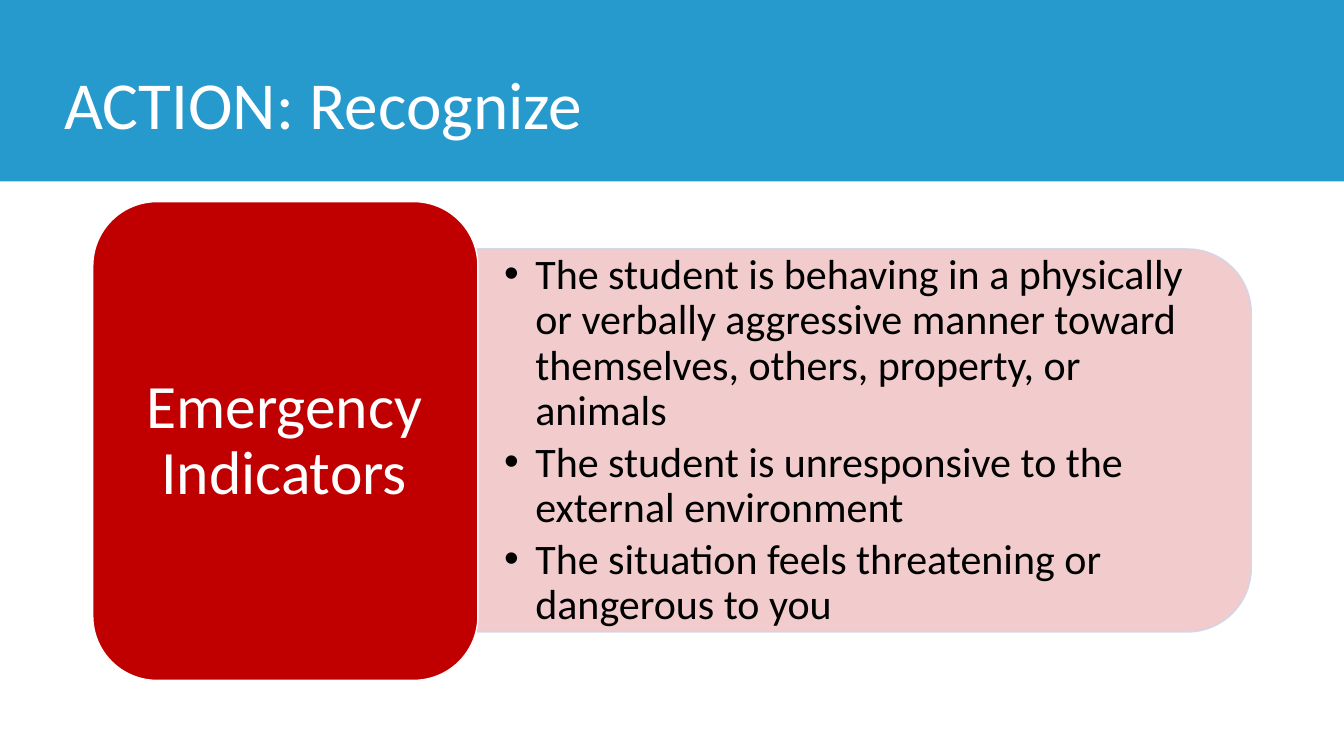
from lxml.etree import SubElement
from pptx import Presentation
from pptx.dml.color import RGBColor
from pptx.enum.shapes import MSO_SHAPE
from pptx.enum.text import MSO_ANCHOR, PP_ALIGN
from pptx.oxml.ns import qn
from pptx.util import Inches, Pt


def color(code):
    return RGBColor.from_string(code)


def fade(fill, percent):
    fill_tag = fill._xPr.find(qn("a:solidFill"))
    SubElement(fill_tag[0], qn("a:alpha"), val=str(percent * 1000))


class Deck:
    font = "Calibri"

    def __init__(self, width, height):
        self.show = Presentation()
        self.show.slide_width = Inches(width)
        self.show.slide_height = Inches(height)
        self.slide = self.show.slides.add_slide(self.show.slide_layouts[6])

    def shape(self, kind, box, fill, line=None, alpha=100, edge=100, turn=0):
        item = self.slide.shapes.add_shape(kind, *map(Inches, box))
        item.shadow.inherit = False
        item.rotation = turn
        item.fill.solid()
        item.fill.fore_color.rgb = color(fill)
        if alpha < 100:
            fade(item.fill, alpha)
        if line:
            item.line.color.rgb = color(line)
            item.line.width = Pt(1)
            if edge < 100:
                fade(item.line.fill, edge)
        else:
            item.line.fill.background()

    def text(self, box, lines, size, ink, inset=(0.1, 0.05), align=PP_ALIGN.LEFT,
             bullet=False, after=0):
        frame = self.slide.shapes.add_textbox(*map(Inches, box)).text_frame
        side, edge = map(Inches, inset)
        form = {"word_wrap": True, "vertical_anchor": MSO_ANCHOR.MIDDLE,
                "margin_left": side, "margin_right": side,
                "margin_top": edge, "margin_bottom": edge}
        for name, value in form.items():
            setattr(frame, name, value)
        frame.text = "\n".join(lines)
        for para in frame.paragraphs:
            form = {"alignment": align, "line_spacing": 0.9, "space_after": Pt(after)}
            for name, value in form.items():
                setattr(para, name, value)
            if bullet:
                self.bullet(para)
            form = {"name": self.font, "size": Pt(size)}
            for run in para.runs:
                for name, value in form.items():
                    setattr(run.font, name, value)
                run.font.color.rgb = color(ink)

    def bullet(self, para):
        props = para._p.get_or_add_pPr()
        props.set("marL", str(Inches(0.31)))
        props.set("indent", str(-Inches(0.31)))
        SubElement(props, qn("a:buFont"), typeface="Arial")
        SubElement(props, qn("a:buChar"), char="•")


def main():
    deck = Deck(13.33, 7.5)
    deck.shape(MSO_SHAPE.RECTANGLE, (0, 0, 13.33, 1.8), "279ACD")
    deck.shape(MSO_SHAPE.ROUND_2_SAME_RECTANGLE, (6.67, 0.53, 3.8, 7.68), "C00000",
               line="CFD5EA", alpha=20, edge=90, turn=90)
    deck.text((4.73, 2.66, 7.5, 3.43), [
        "The student is behaving in a physically or verbally aggressive manner "
        "toward themselves, others, property, or animals",
        "The student is unresponsive to the external environment",
        "The situation feels threatening or dangerous to you",
    ], 30, "000000", inset=(0.27, 0.14), bullet=True, after=4.5)
    deck.shape(MSO_SHAPE.ROUNDED_RECTANGLE, (0.92, 2, 3.82, 4.75), "C00000", line="FFFFFF")
    deck.text((1.1, 2.19, 3.44, 4.38), ["Emergency", "Indicators"], 44, "FFFFFF",
              inset=(0.18, 0.09), align=PP_ALIGN.CENTER)
    deck.text((0.54, 0.37, 11.8, 1.4), ["ACTION: Recognize"], 48, "FFFFFF")
    deck.show.save("out.pptx")


if __name__ == "__main__":
    main()
